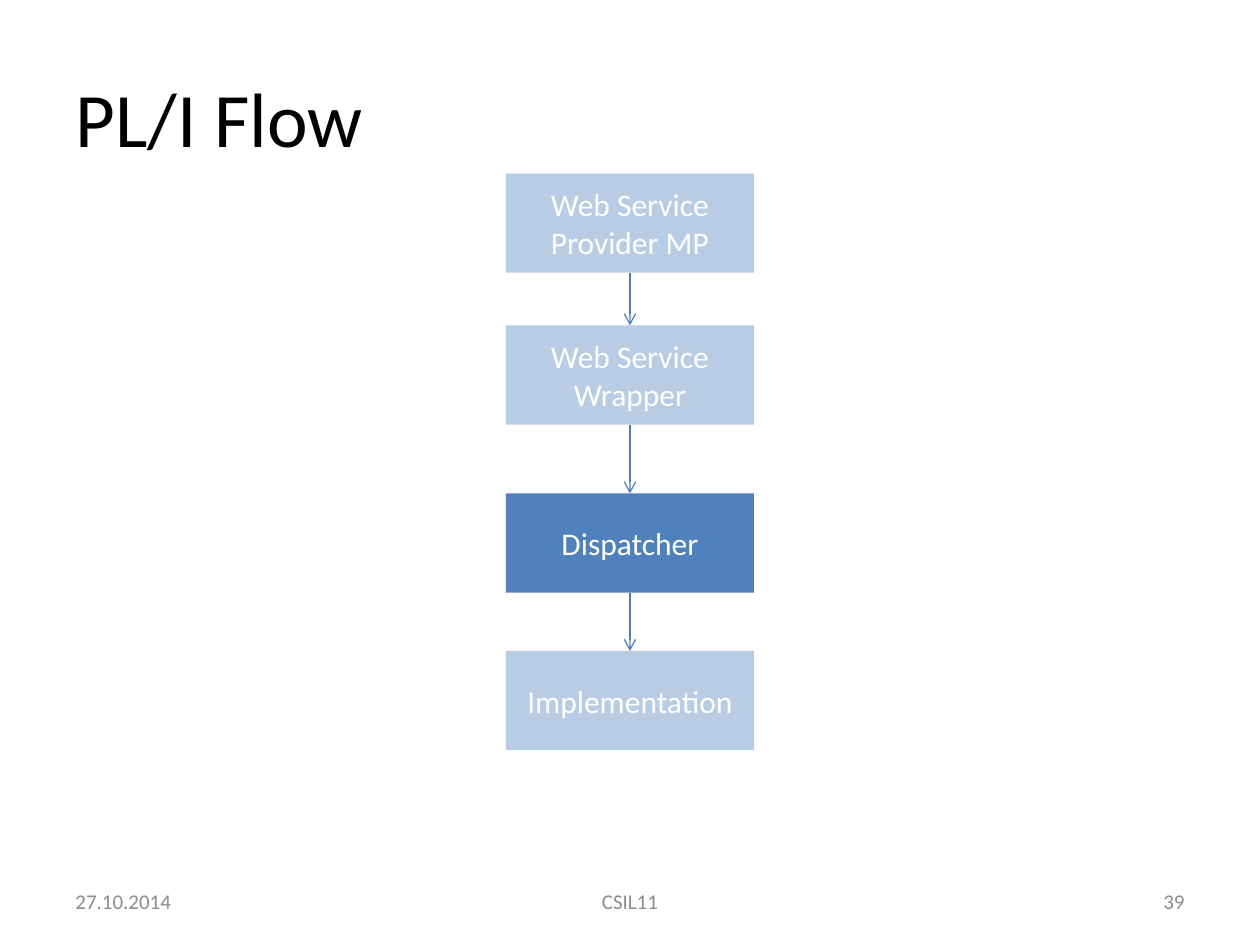
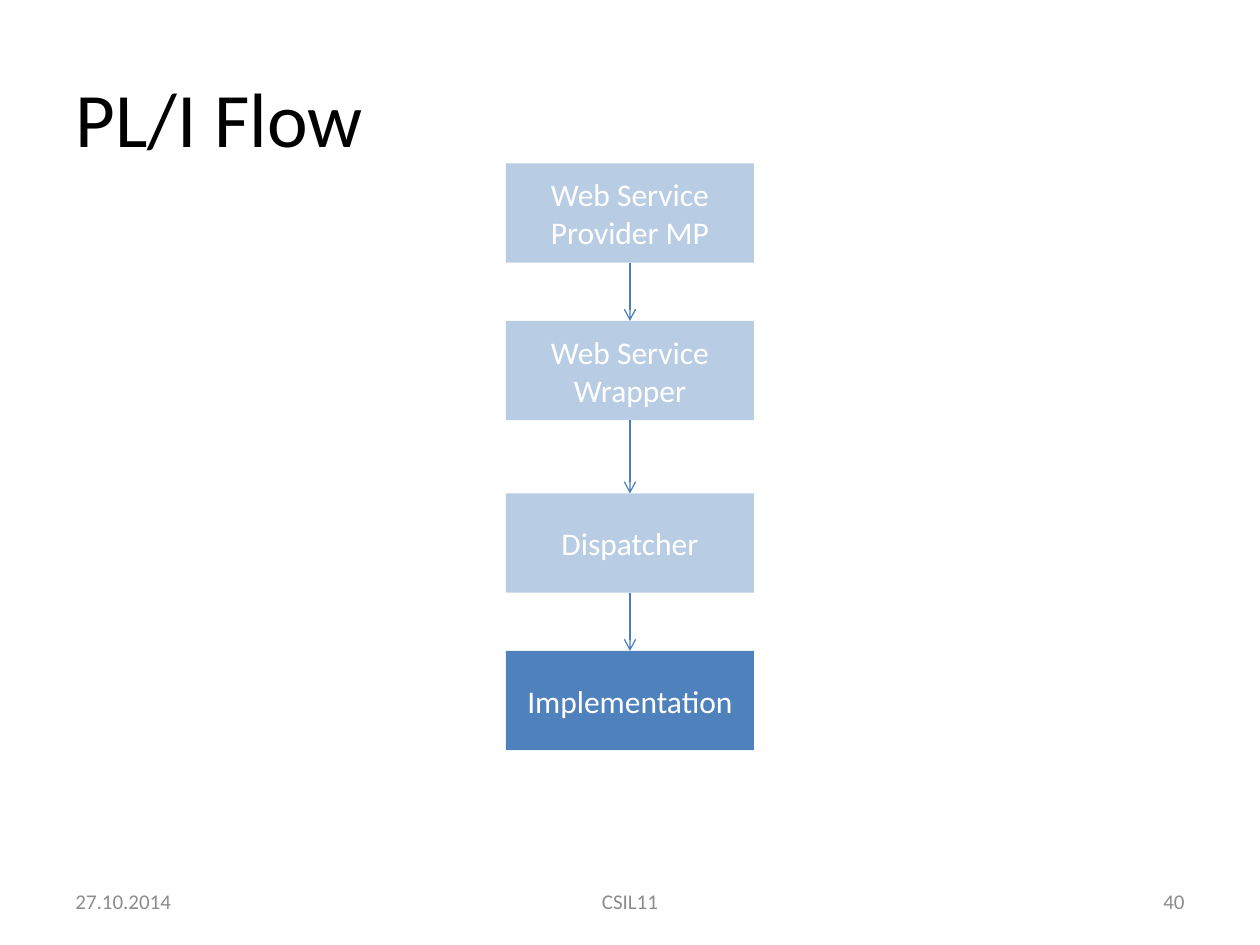
from pptx import Presentation
from pptx.dml.color import RGBColor
from pptx.enum.shapes import MSO_CONNECTOR, MSO_SHAPE
from pptx.enum.text import MSO_ANCHOR, PP_ALIGN
from pptx.oxml.ns import qn
from pptx.util import Pt
from lxml import etree

RECTANGLE = MSO_SHAPE.RECTANGLE
STRAIGHT = MSO_CONNECTOR.STRAIGHT
MIDDLE = MSO_ANCHOR.MIDDLE
LEFT, CENTER, RIGHT = PP_ALIGN.LEFT, PP_ALIGN.CENTER, PP_ALIGN.RIGHT
TOP_SIDE, BOTTOM_SIDE = 0, 2

FONT = "Calibri"
COLORS = {"title": "000000", "step": "4F81BD", "step text": "FFFFFF",
          "arrow": "4B7EBC", "footer": "8C8C8C"}
PAGE_WIDTH, PAGE_HEIGHT = 720, 540
STEP_WIDTH, STEP_HEIGHT = 141.73, 56.69
STEP_LEFT = (PAGE_WIDTH - STEP_WIDTH) / 2
FADED_ALPHA = 40000

STEPS = [["Web Service", "Provider MP"], ["Web Service", "Wrapper"],
         ["Dispatcher"], ["Implementation"]]
# Page number, highlighted step, top of each step
FLOWS = [(39, "Dispatcher", [99.21, 185.95, 282, 372]),
         (40, "Implementation", [93.4, 183.4, 282, 372])]


def rgb(name):
    return RGBColor.from_string(COLORS[name])


class FlowDeck:
    def __init__(self):
        self.deck = Presentation()
        self.deck.slide_width = Pt(PAGE_WIDTH)
        self.deck.slide_height = Pt(PAGE_HEIGHT)
        self.page = None

    def add_page(self, title):
        self.page = self.deck.slides.add_slide(self.deck.slide_layouts[5])
        box = self.page.shapes.title
        box.left, box.top, box.width, box.height = Pt(36), Pt(21.6), Pt(648), Pt(90)
        self.set_text(box, [title], 44, "title", LEFT)

    def set_text(self, box, lines, size, color, align):
        frame = box.text_frame
        frame.word_wrap = True
        frame.vertical_anchor = MIDDLE
        frame.text = "\n".join(lines)
        for para in frame.paragraphs:
            para.alignment = align
            para.font.name = FONT
            para.font.size = Pt(size)
            para.font.color.rgb = rgb(color)

    def add_step(self, lines, top, highlighted):
        box = self.page.shapes.add_shape(
            RECTANGLE, Pt(STEP_LEFT), Pt(top), Pt(STEP_WIDTH), Pt(STEP_HEIGHT))
        box.shadow.inherit = False
        box.line.fill.background()
        box.fill.solid()
        box.fill.fore_color.rgb = rgb("step")
        if not highlighted:
            color = box._element.spPr.find(qn("a:solidFill")).find(qn("a:srgbClr"))
            etree.SubElement(color, qn("a:alpha"), val=str(FADED_ALPHA))
        self.set_text(box, lines, 18, "step text", CENTER)
        return box

    def add_arrow(self, upper, lower):
        arrow = self.page.shapes.add_connector(STRAIGHT, 0, 0, 0, 0)
        arrow.begin_connect(upper, BOTTOM_SIDE)
        arrow.end_connect(lower, TOP_SIDE)
        arrow.line.color.rgb = rgb("arrow")
        arrow.line.width = Pt(0.75)
        properties = arrow._element.spPr
        etree.SubElement(properties.find(qn("a:ln")), qn("a:tailEnd"), type="arrow")
        etree.SubElement(properties, qn("a:effectLst"))

    def add_footer(self, number):
        parts = [("27.10.2014", 36, 168, LEFT), ("CSIL11", 246, 228, CENTER),
                 (str(number), 516, 168, RIGHT)]
        for text, left, width, align in parts:
            box = self.page.shapes.add_textbox(Pt(left), Pt(500.5), Pt(width), Pt(28.75))
            self.set_text(box, [text], 12, "footer", align)


def main():
    flow = FlowDeck()
    for number, highlight, tops in FLOWS:
        flow.add_page("PL/I Flow")
        # Steps, then the arrows between neighbours
        boxes = [flow.add_step(lines, top, highlight in lines)
                 for lines, top in zip(STEPS, tops)]
        for upper, lower in zip(boxes, boxes[1:]):
            flow.add_arrow(upper, lower)
        flow.add_footer(number)
    flow.deck.save("out.pptx")


if __name__ == "__main__":
    main()
